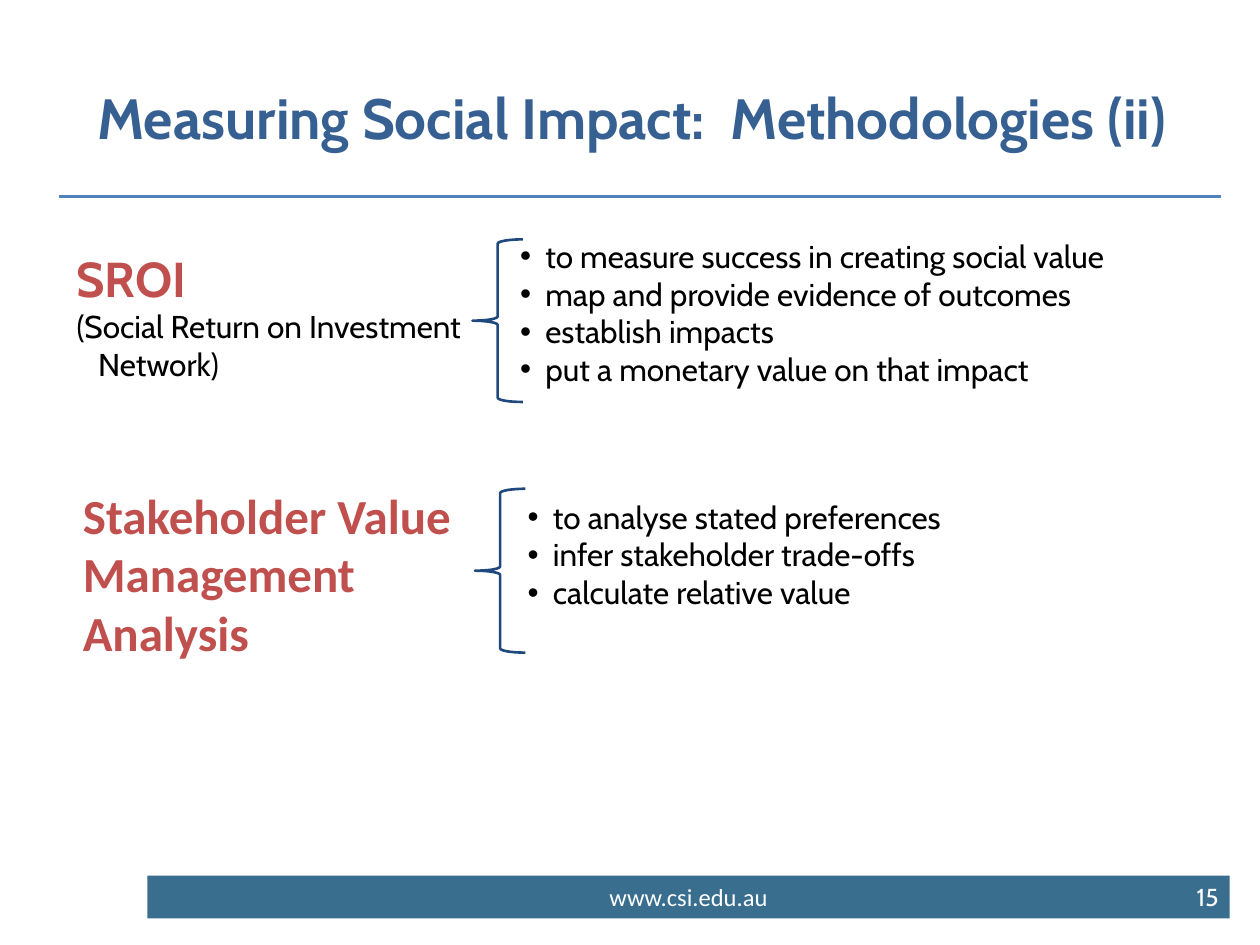
from lxml import etree
from pptx import Presentation
from pptx.dml.color import RGBColor
from pptx.enum.shapes import MSO_CONNECTOR, MSO_SHAPE
from pptx.enum.text import MSO_ANCHOR, MSO_AUTO_SIZE, PP_ALIGN
from pptx.oxml.ns import qn
from pptx.util import Inches, Pt

LEFT, CENTER, RIGHT = PP_ALIGN.LEFT, PP_ALIGN.CENTER, PP_ALIGN.RIGHT
TOP, MIDDLE = MSO_ANCHOR.TOP, MSO_ANCHOR.MIDDLE
NO_AUTOFIT = MSO_AUTO_SIZE.NONE
RECTANGLE, LEFT_BRACE = MSO_SHAPE.RECTANGLE, MSO_SHAPE.LEFT_BRACE
STRAIGHT = MSO_CONNECTOR.STRAIGHT

THEME = {
    "band": RGBColor.from_string("3A6E8F"),
    "rule": RGBColor.from_string("4F81BD"),
    "brace": RGBColor.from_string("1F497D"),
    "title": {"name": "Cabin", "size": Pt(32.4), "bold": True, "color": "376092"},
    "method": {"name": "Cabin", "size": Pt(28), "bold": True, "color": "C0504D"},
    "method_alt": {"name": "Calibri", "size": Pt(28), "bold": True, "color": "C0504D"},
    "body": {"name": "Cabin", "size": Pt(18), "bold": False, "color": "000000"},
    "footer": {"name": "Calibri", "size": Pt(14), "bold": False, "color": "FFFFFF"},
    "number": {"name": "Cabin", "size": Pt(14), "bold": False, "color": "FFFFFF"},
}


def write(frame, lines, align=LEFT, anchor=TOP):
    for key, value in {"word_wrap": True, "auto_size": NO_AUTOFIT, "vertical_anchor": anchor}.items():
        setattr(frame, key, value)
    for index, (text, style, indent, bullet) in enumerate(lines):
        paragraph = frame.paragraphs[0] if index == 0 else frame.add_paragraph()
        paragraph.alignment = align
        properties = paragraph._p.get_or_add_pPr()
        if indent:
            properties.set("marL", str(Inches(indent)))
        if bullet:
            properties.set("indent", str(-Inches(indent)))
            etree.SubElement(properties, qn("a:buFont")).set("typeface", "Arial")
            etree.SubElement(properties, qn("a:buChar")).set("char", "•")
        run = paragraph.add_run()
        run.text = text
        for key, value in THEME[style].items():
            if key == "color":
                run.font.color.rgb = RGBColor.from_string(value)
            else:
                setattr(run.font, key, value)


prs = Presentation()
prs.slide_width, prs.slide_height = Inches(10), Inches(7.5)
slide = prs.slides.add_slide(prs.slide_layouts[5])
shapes = slide.shapes

footer_band = shapes.add_shape(RECTANGLE, Inches(1.17), Inches(6.95), Inches(8.59), Inches(0.34))
footer_band.shadow.inherit = False
footer_band.fill.solid()
footer_band.fill.fore_color.rgb = THEME["band"]
footer_band.line.fill.background()
write(footer_band.text_frame, [("www.csi.edu.au", "footer", 0, False)], CENTER, MIDDLE)

page_number = shapes.add_textbox(Inches(9.22), Inches(6.95), Inches(0.55), Inches(0.34))
write(page_number.text_frame, [("15", "number", 0, False)], RIGHT, MIDDLE)

title_rule = shapes.add_connector(STRAIGHT, Inches(0.47), Inches(1.56), Inches(9.69), Inches(1.56))
title_rule.line.color.rgb = THEME["rule"]
title_rule.line.width = Pt(2)
etree.SubElement(title_rule._element.spPr, qn("a:effectLst"))

heading = shapes.title
heading.left, heading.top, heading.width, heading.height = Inches(0.27), Inches(0.3), Inches(9.49), Inches(1.25)
write(heading.text_frame, [("Measuring Social Impact:  Methodologies (ii)", "title", 0, False)], CENTER, MIDDLE)

methodologies = [
    {
        "label_at": (0.51, 1.92, 3.43, 1.18),
        "label": [
            ("SROI", "method", 0, False),
            ("(Social Return on Investment", "body", 0, False),
            ("Network)", "body", 0.17, False),
        ],
        "brace_at": (3.75, 1.9, 0.4, 1.29),
        "aims_at": (4.03, 1.83, 5.72, 1.31),
        "aims": [
            "to measure success in creating social value",
            "map and provide evidence of outcomes",
            "establish impacts",
            "put a monetary value on that impact",
        ],
    },
    {
        "label_at": (0.56, 3.8, 3.17, 1.51),
        "label": [
            ("Stakeholder Value", "method_alt", 0, False),
            ("Management Analysis", "method_alt", 0, False),
        ],
        "brace_at": (3.77, 3.88, 0.4, 1.3),
        "aims_at": (4.09, 3.9, 5.33, 1.01),
        "aims": [
            "to analyse stated preferences",
            "infer stakeholder trade-offs",
            "calculate relative value",
        ],
    },
]

for method in methodologies:
    label = shapes.add_textbox(*map(Inches, method["label_at"]))
    write(label.text_frame, method["label"])

    brace = shapes.add_shape(LEFT_BRACE, *map(Inches, method["brace_at"]))
    brace.shadow.inherit = False
    brace.fill.background()
    brace.line.color.rgb = THEME["brace"]
    brace.line.width = Pt(1.5)

    aims = shapes.add_textbox(*map(Inches, method["aims_at"]))
    write(aims.text_frame, [(aim, "body", 0.2, True) for aim in method["aims"]])

prs.save("out.pptx")
